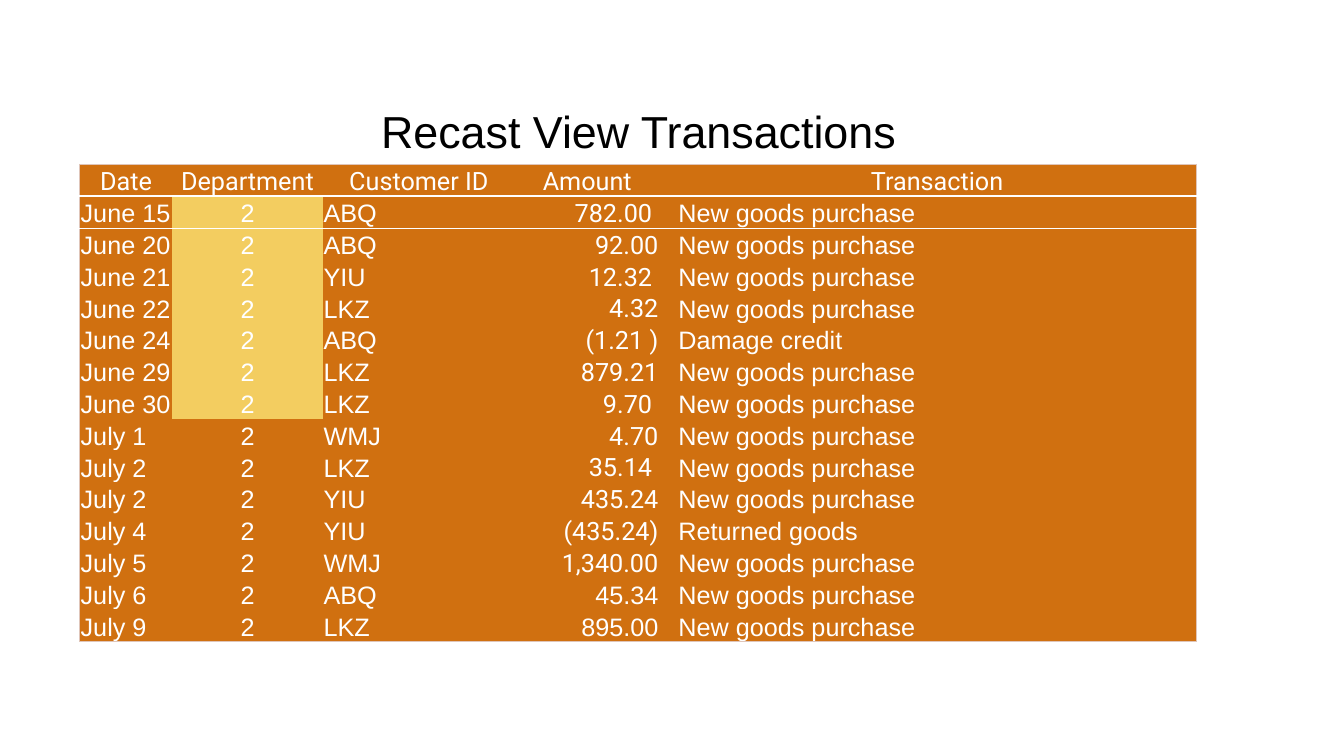
from lxml import etree
from pptx import Presentation
from pptx import util as u
from pptx.dml import color
from pptx.enum import text
from pptx.oxml import ns

WIDTH, HEIGHT = 13.33, 7.5
ORANGE, YELLOW, WHITE, EDGE = "D07010", "F3CD60", "FFFFFF", "DFC5B9"
NO_STYLE = "{2D5ABB26-0587-4C30-8999-92F81FD0307C}"
LEFT, CENTER, RIGHT = text.PP_ALIGN.LEFT, text.PP_ALIGN.CENTER, text.PP_ALIGN.RIGHT

TABLE_LEFT, TABLE_TOP, TABLE_HEIGHT = 0.79, 1.63, 4.6
COLUMN_WIDTHS = [0.92, 1.49, 1.91, 1.43, 0.18, 5.15]
COLUMN_ALIGNS = [LEFT, CENTER, LEFT, RIGHT, LEFT, LEFT]
AMOUNT = 3
HEADER = ["Date", "Department", "Customer ID", "Amount", "", "Transaction"]
PURCHASE = "New goods purchase"
TRANSACTIONS = [
    ("June 15", "ABQ", "782.00 ", PURCHASE),
    ("June 20", "ABQ", "92.00", PURCHASE),
    ("June 21", "YIU", "12.32 ", PURCHASE),
    ("June 22", "LKZ", "4.32", PURCHASE),
    ("June 24", "ABQ", "(1.21 )", "Damage credit"),
    ("June 29", "LKZ", "879.21", PURCHASE),
    ("June 30", "LKZ", "9.70 ", PURCHASE),
    ("July 1", "WMJ", "4.70", PURCHASE),
    ("July 2", "LKZ", "35.14 ", PURCHASE),
    ("July 2", "YIU", "435.24", PURCHASE),
    ("July 4", "YIU", "(435.24)", "Returned goods"),
    ("July 5", "WMJ", "1,340.00", PURCHASE),
    ("July 6", "ABQ", "45.34", PURCHASE),
    ("July 9", "LKZ", "895.00", PURCHASE),
]
ARIAL_AMOUNTS = 2  # the last amounts are set in Arial


def rgb(value):
    return color.RGBColor.from_string(value)


def write(frame, words, size=18, font="Arial", ink=WHITE, align=LEFT):
    para = frame.paragraphs[0]
    para.alignment = align
    para.line_spacing = 0.9
    if words:
        span = para.add_run()
        span.text = words
        span.font.size = u.Pt(size)
        span.font.name = font
        span.font.color.rgb = rgb(ink)


def add_title(page, words):
    box = page.shapes.add_textbox(u.Inches(3.66), u.Inches(1.04),
                                  u.Inches(5.35), u.Inches(0.59))
    box.text_frame.word_wrap = False
    box.text_frame.auto_size = text.MSO_AUTO_SIZE.SHAPE_TO_FIT_TEXT
    write(box.text_frame, words, size=32, ink="000000", align=CENTER)


def set_borders(cell, borders):
    properties = cell._tc.get_or_add_tcPr()
    for side in "LRTB":
        if side in borders:
            ink, points = borders[side]
            line = etree.SubElement(properties, ns.qn(f"a:ln{side}"), w=str(u.Pt(points)))
            fill = etree.SubElement(line, ns.qn("a:solidFill"))
            etree.SubElement(fill, ns.qn("a:srgbClr"), val=ink)


def borders_at(row, column, last_row, last_column):
    borders = {}
    if column == 0:
        borders["L"] = (EDGE, 0.75)
    if column == last_column:
        borders["R"] = (EDGE, 0.75)
    if row == 0:
        borders.update(T=(EDGE, 0.75), B=(WHITE, 1))
    if row == 1:
        borders.update(T=(WHITE, 1), B=(WHITE, 0.5))
    if row == last_row:
        borders["B"] = (EDGE, 0.75)
    return borders


def fill_cell(cell, words, fill, borders, **style):
    cell.margin_left = cell.margin_right = cell.margin_top = u.Inches(0.01)
    cell.margin_bottom = 0
    cell.vertical_anchor = text.MSO_ANCHOR.BOTTOM
    write(cell.text_frame, words, **style)
    set_borders(cell, borders)
    cell.fill.solid()
    cell.fill.fore_color.rgb = rgb(fill)


def add_transactions(page):
    rows = [HEADER] + [[date, "2", customer, amount, "", kind]
                       for date, customer, amount, kind in TRANSACTIONS]
    last_row, last_column = len(rows) - 1, len(HEADER) - 1
    frame = page.shapes.add_table(len(rows), len(HEADER), u.Inches(TABLE_LEFT),
                                  u.Inches(TABLE_TOP), u.Inches(sum(COLUMN_WIDTHS)),
                                  u.Inches(TABLE_HEIGHT))
    table = frame.table
    table._tbl.tblPr.find(ns.qn("a:tableStyleId")).text = NO_STYLE
    for column, width in zip(table.columns, COLUMN_WIDTHS):
        column.width = u.Inches(width)

    for r, values in enumerate(rows):
        table.rows[r].height = u.Inches(TABLE_HEIGHT / len(rows))
        for c, words in enumerate(values):
            in_june = c == 1 and values[0].startswith("June")
            roboto = r == 0 or (c == AMOUNT and r <= last_row - ARIAL_AMOUNTS)
            fill_cell(table.cell(r, c), words, YELLOW if in_june else ORANGE,
                      borders_at(r, c, last_row, last_column),
                      font="Roboto" if roboto else "Arial",
                      align=CENTER if r == 0 else COLUMN_ALIGNS[c])


def main():
    deck = Presentation()
    deck.slide_width, deck.slide_height = u.Inches(WIDTH), u.Inches(HEIGHT)
    page = deck.slides.add_slide(deck.slide_layouts[6])
    add_transactions(page)
    add_title(page, "Recast View Transactions")
    deck.save("out.pptx")


if __name__ == "__main__":
    main()
